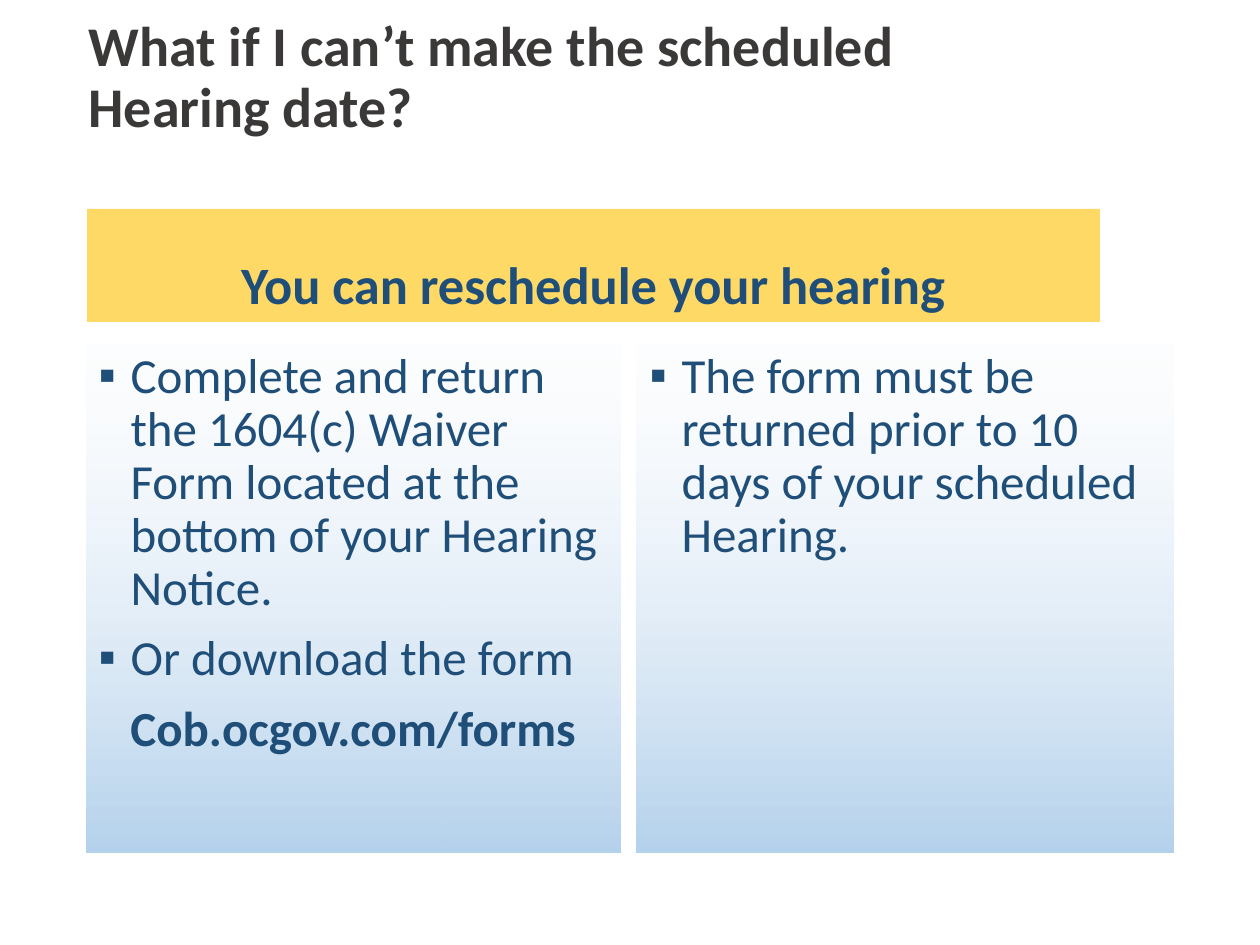
import pptx
import pptx.dml.color
import pptx.enum.text
import pptx.oxml.ns
import pptx.util
import lxml.etree

RGB = pptx.dml.color.RGBColor
ALIGN = pptx.enum.text.PP_ALIGN
ANCHOR = pptx.enum.text.MSO_ANCHOR

SCALE = 914400 / 126
GOLD = RGB(0xFF, 0xD9, 0x66)
NAVY = RGB(0x1F, 0x4E, 0x79)
GREY = RGB(0x3B, 0x38, 0x38)
PALE = RGB(0xF7, 0xFA, 0xFD)
SKY = RGB(0xB5, 0xD2, 0xEC)

BODY = {"name": "Calibri", "size": pptx.util.Pt(28), "bold": False}
STRONG = {**BODY, "bold": True}
HEAD = {**STRONG, "size": pptx.util.Pt(30)}
TITLE = {**STRONG, "size": pptx.util.Pt(32)}


def emu(px):
    """Turn px into EMU."""
    return pptx.util.Emu(round(px * SCALE))


def apply(item, form):
    """Set each attribute named in a dict."""
    for key, value in form.items():
        setattr(item, key, value)


def place(shape, box, anchor):
    """Move a placeholder to its box and prepare its text frame."""
    apply(shape, dict(zip(("left", "top", "width", "height"), map(emu, box))))
    apply(shape.text_frame, {
        "word_wrap": True,
        "auto_size": pptx.enum.text.MSO_AUTO_SIZE.NONE,
        "vertical_anchor": anchor,
    })


def add_bullet(para, mark):
    """Give a paragraph a hanging bullet, or none."""
    props = para._p.get_or_add_pPr()
    hang = emu(32) if mark else 0
    props.set("marL", str(hang))
    props.set("indent", str(-hang))
    tag = pptx.oxml.ns.qn("a:buChar" if mark else "a:buNone")
    bullet = lxml.etree.SubElement(props, tag)
    if mark:
        bullet.set("char", mark)


def write(frame, lines, color):
    """Write lines of text, bullet, alignment and font format."""
    for num, (text, mark, align, form) in enumerate(lines):
        para = frame.add_paragraph() if num else frame.paragraphs[0]
        add_bullet(para, mark)
        apply(para, {
            "alignment": align,
            "line_spacing": 0.9,
            "space_before": pptx.util.Pt(10 if num else 0),
        })
        run = para.add_run()
        run.text = text
        apply(run.font, form)
        run.font.color.rgb = color


def add_title(shape, box, text):
    """Build the slide title."""
    place(shape, box, ANCHOR.MIDDLE)
    write(shape.text_frame, [(text, None, ALIGN.LEFT, TITLE)], GREY)


def add_banner(shape, box, text):
    """Build the gold banner."""
    place(shape, box, ANCHOR.BOTTOM)
    shape.fill.solid()
    shape.fill.fore_color.rgb = GOLD
    write(shape.text_frame, [(text, None, ALIGN.CENTER, HEAD)], NAVY)


def add_panel(shape, box, lines):
    """Build a list panel that fades downward into blue."""
    place(shape, box, ANCHOR.TOP)
    shape.fill.gradient()
    shape.fill.gradient_angle = 270
    for stop, color in zip(shape.fill.gradient_stops, (PALE, SKY)):
        stop.color.rgb = color
    first = shape.element.xpath(".//a:gs/a:srgbClr")[0]
    alpha = lxml.etree.SubElement(first, pptx.oxml.ns.qn("a:alpha"))
    alpha.set("val", "25000")
    write(shape.text_frame, lines, NAVY)


def main():
    """Build and save the slide."""
    deck = pptx.Presentation()
    apply(deck, {"slide_width": emu(1260), "slide_height": emu(945)})
    slide = deck.slides.add_slide(deck.slide_layouts[4])
    slots = {s.placeholder_format.idx: s for s in slide.placeholders}
    add_banner(slots[1], (87, 209, 1013, 113), "You can reschedule your hearing")
    add_panel(slots[2], (86, 345, 534, 508), [
        ("Complete and return the 1604(c) Waiver Form located at the bottom "
         "of your Hearing Notice.", "▪", ALIGN.LEFT, BODY),
        ("Or download the form", "▪", ALIGN.LEFT, BODY),
        ("Cob.ocgov.com/forms", None, ALIGN.CENTER, STRONG),
    ])
    add_panel(slots[4], (637, 345, 537, 508), [
        ("The form must be returned prior to 10 days of your scheduled "
         "Hearing.", "▪", ALIGN.LEFT, BODY),
    ])
    add_title(slots[0], (76, 24, 951, 110),
              "What if I can’t make the scheduled Hearing date?")
    spare = slots[3].element
    spare.getparent().remove(spare)
    deck.save("out.pptx")


if __name__ == "__main__":
    main()
